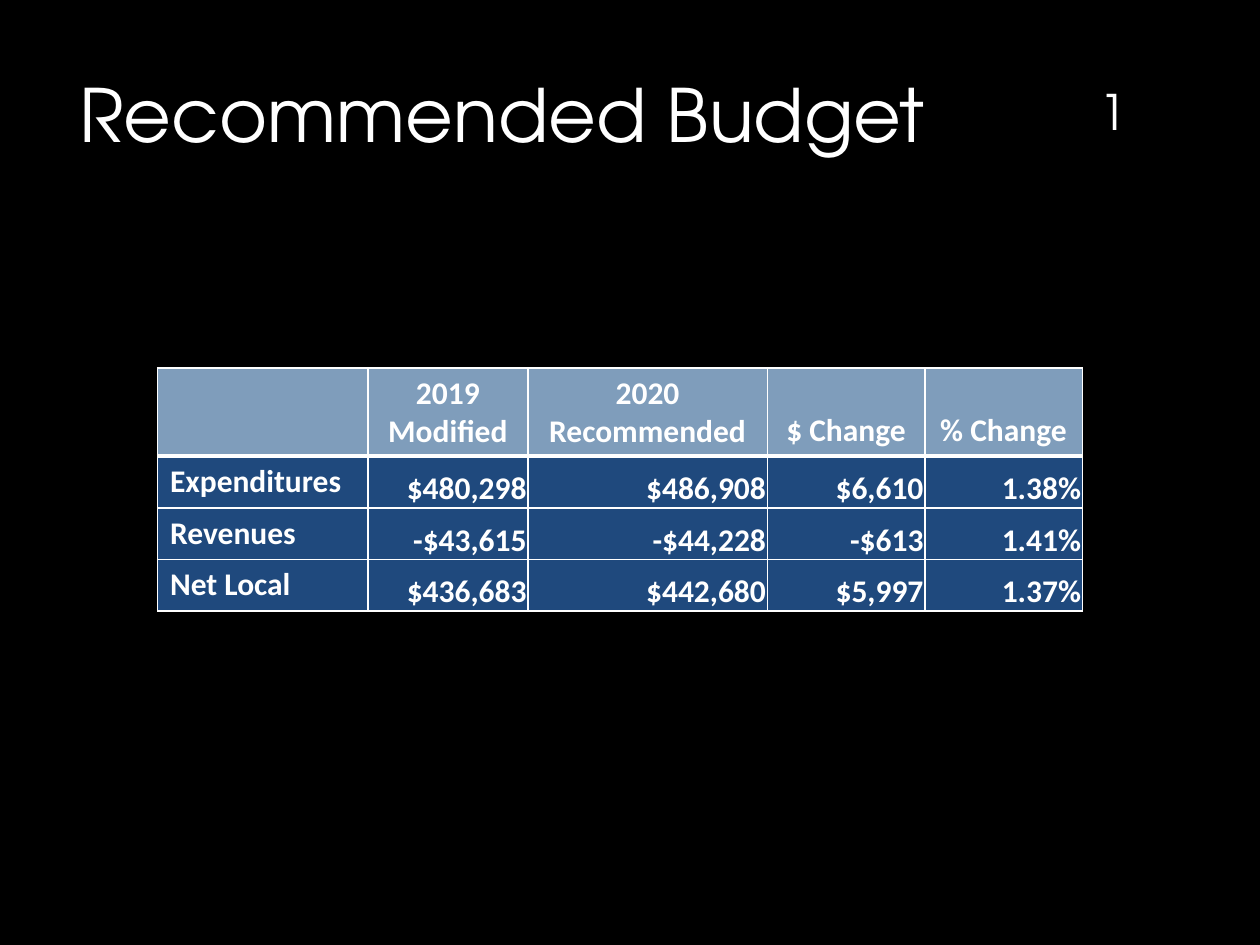
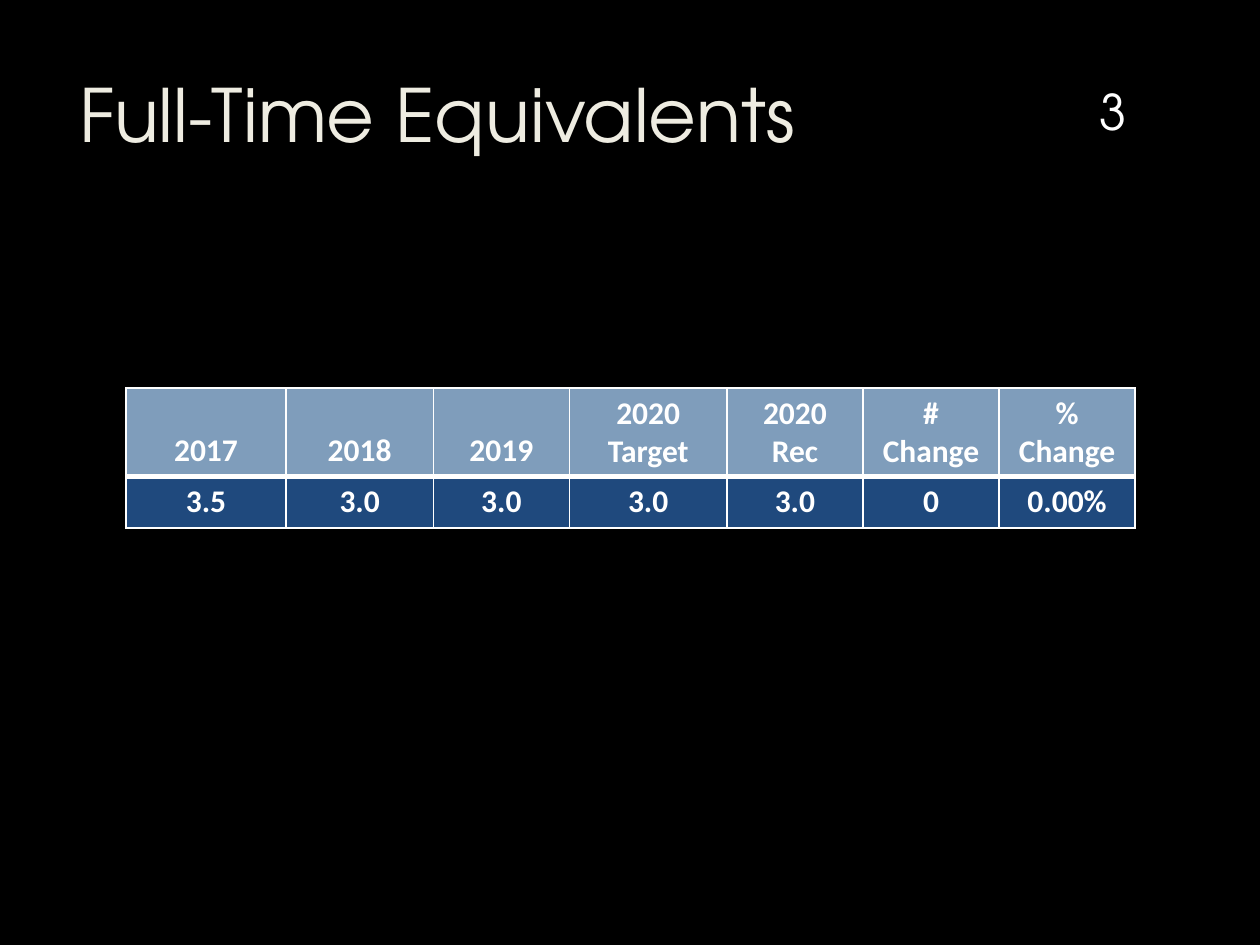
"""Builds two budget slides, each with a title, a page number and a table."""
import pptx
import pptx.dml.color
import pptx.enum.text
import pptx.oxml
import pptx.oxml.ns
import pptx.util

PX = 9144
COLORS = {
    "background": "000000",
    "white": "FFFFFF",
    "cream": "EEECE1",
    "header": "7F9DBB",
    "body": "1F497D",
}
ALIGN = pptx.enum.text.PP_ALIGN
ANCHOR = pptx.enum.text.MSO_ANCHOR


class BudgetDeck:
    """Holds the style and the current slide."""

    heading_font = "TeX Gyre Adventor"
    table_font = "Calibri"

    def __init__(self):
        self.deck = pptx.Presentation()
        self.deck.slide_width = 1000 * PX
        self.deck.slide_height = 750 * PX
        self.slide = None

    def color(self, name):
        return pptx.dml.color.RGBColor.from_string(COLORS[name])

    def place(self, shape, left, top, width, height):
        shape.left, shape.top = left * PX, top * PX
        shape.width, shape.height = width * PX, height * PX

    def style(self, paragraph, font, size, color="white", align=ALIGN.LEFT, bold=False):
        paragraph.alignment = align
        paragraph.font.name = font
        paragraph.font.size = pptx.util.Pt(size)
        paragraph.font.bold = bold
        paragraph.font.color.rgb = self.color(color)

    def add_slide(self, title, number, title_color="white"):
        self.slide = self.deck.slides.add_slide(self.deck.slide_layouts[5])
        fill = self.slide.background.fill
        fill.solid()
        fill.fore_color.rgb = self.color("background")
        self.add_title(title, title_color)
        self.add_page_number(number)

    def add_title(self, text, color):
        title = self.slide.shapes.title
        self.place(title, 53, 50, 772, 153)
        frame = title.text_frame
        frame.text = text
        frame.vertical_anchor = ANCHOR.TOP
        frame.auto_size = pptx.enum.text.MSO_AUTO_SIZE.NONE
        self.style(frame.paragraphs[0], self.heading_font, 42, color)

    def add_page_number(self, number):
        box = self.slide.shapes.add_textbox(0, 0, 0, 0)
        self.place(box, 849, 32, 69, 84)
        frame = box.text_frame
        frame.word_wrap = True
        frame.vertical_anchor = ANCHOR.BOTTOM
        frame.text = str(number)
        self.style(frame.paragraphs[0], self.heading_font, 28, align=ALIGN.CENTER)

    def add_borders(self, cell, top, bottom):
        properties = cell._tc.get_or_add_tcPr()
        sides = {"lnL": 1, "lnR": 1, "lnT": top, "lnB": bottom}
        for position, (side, points) in enumerate(sides.items()):
            line = pptx.oxml.parse_xml(
                f'<a:{side} {pptx.oxml.ns.nsdecls("a")} w="{pptx.util.Pt(points)}">'
                f'<a:solidFill><a:srgbClr val="{COLORS["white"]}"/></a:solidFill></a:{side}>'
            )
            properties.insert(position, line)

    def add_cell(self, cell, text, row, align, anchor):
        cell.text = text
        cell.vertical_anchor = anchor
        cell.fill.solid()
        cell.fill.fore_color.rgb = self.color("body" if row else "header")
        for paragraph in cell.text_frame.paragraphs:
            self.style(paragraph, self.table_font, 18, align=align, bold=True)
        if align == ALIGN.RIGHT:
            cell.margin_left = cell.margin_right = cell.margin_top = PX
            cell.margin_bottom = 0
        self.add_borders(cell, 3 if row == 1 else 1, 1 if row else 3)

    def add_table(self, left, top, widths, heights, rows, labelled=False):
        frame = self.slide.shapes.add_table(len(rows), len(widths), 0, 0, PX, PX)
        self.place(frame, left, top, sum(widths), sum(heights))
        table = frame.table
        table.first_row = table.horz_banding = False
        for column, width in zip(table.columns, widths):
            column.width = width * PX
        for row, (values, height) in enumerate(zip(rows, heights)):
            table.rows[row].height = height * PX
            for column, text in enumerate(values):
                align, anchor = ALIGN.CENTER, ANCHOR.TOP
                if row == 0:
                    anchor = ANCHOR.BOTTOM
                elif labelled and column == 0:
                    align = ALIGN.LEFT
                elif labelled:
                    align, anchor = ALIGN.RIGHT, ANCHOR.BOTTOM
                self.add_cell(table.cell(row, column), text, row, align, anchor)


def main():
    budget = BudgetDeck()

    budget.add_slide("Recommended Budget", 1)
    budget.add_table(
        125, 292, [167, 127, 190, 125, 125], [67, 41, 41, 41],
        [
            ["", "2019\nModified", "2020\nRecommended", "$ Change", "% Change"],
            ["Expenditures", "$480,298", "$486,908", "$6,610", "1.38%"],
            ["Revenues", "-$43,615", "-$44,228", "-$613", "1.41%"],
            ["Net Local", "$436,683", "$442,680", "$5,997", "1.37%"],
        ],
        labelled=True,
    )

    budget.add_slide("Full-Time Equivalents", 3, "cream")
    budget.add_table(
        100, 308, [127, 117, 108, 125, 108, 108, 108], [70, 41],
        [
            ["2017", "2018", "2019", "2020 Target", "2020\nRec", "#\nChange", "%\nChange"],
            ["3.5", "3.0", "3.0", "3.0", "3.0", "0", "0.00%"],
        ],
    )

    budget.deck.save("out.pptx")


if __name__ == "__main__":
    main()
